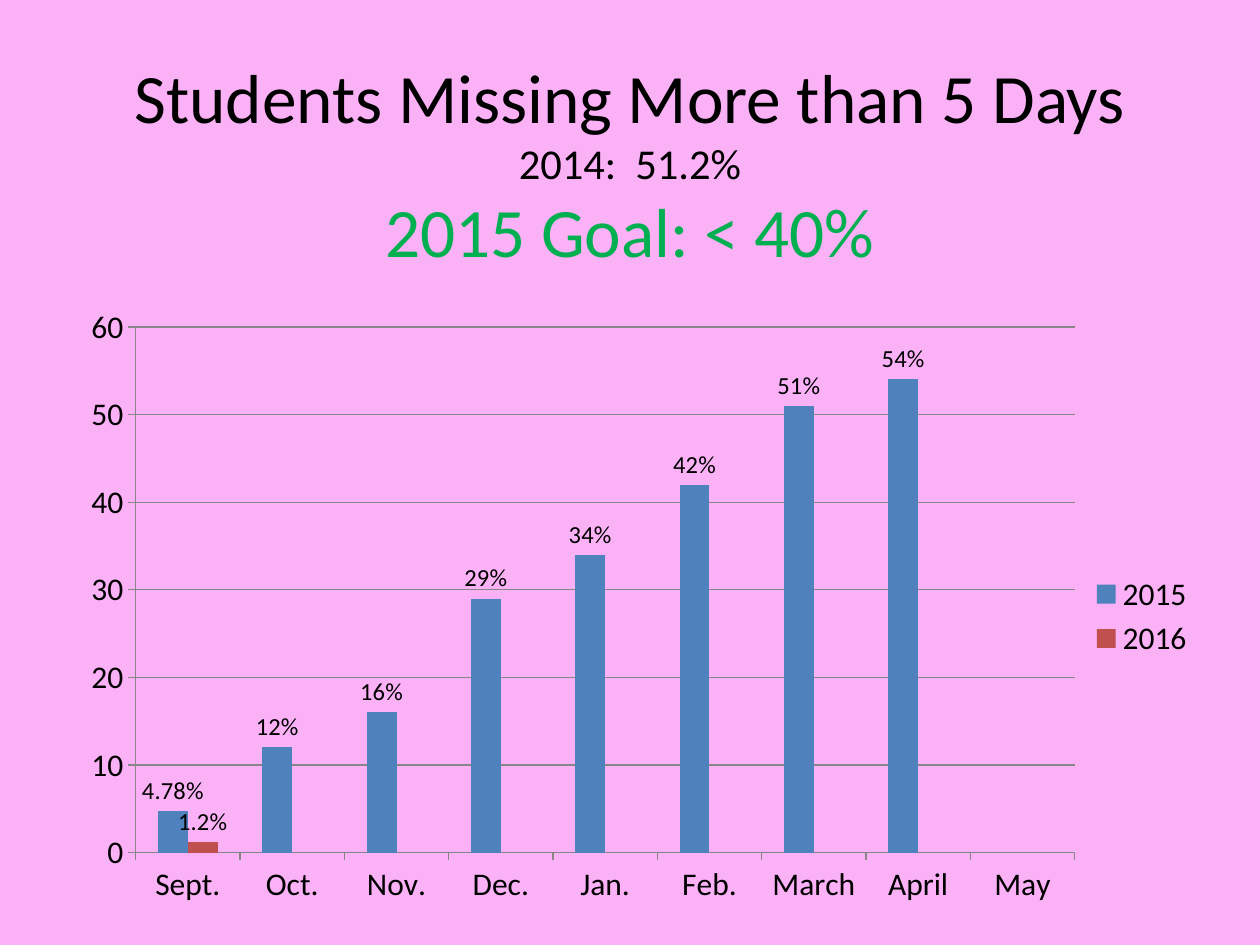
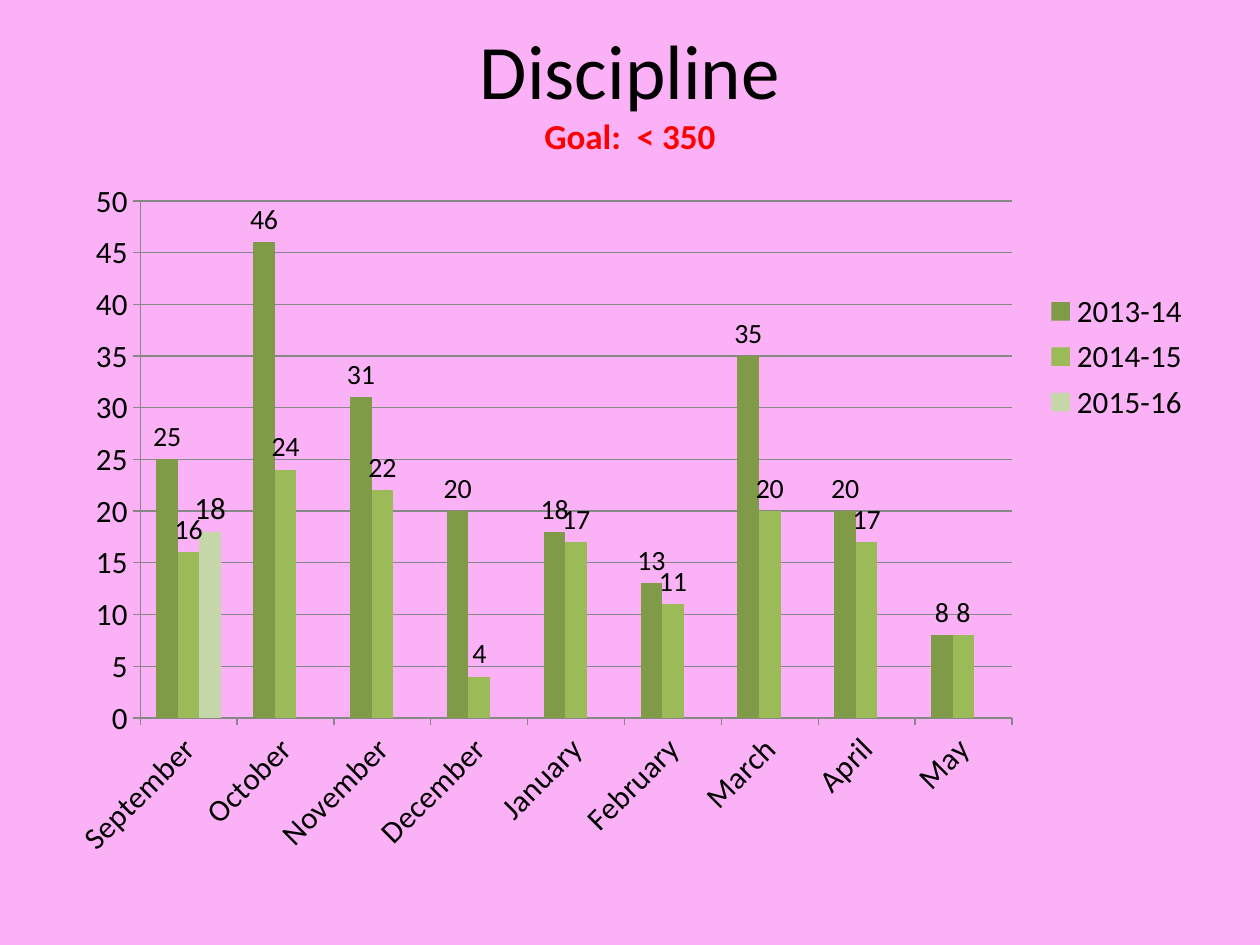
from dataclasses import dataclass

from pptx import Presentation
from pptx.chart.data import CategoryChartData
from pptx.dml.color import RGBColor as RGB
from pptx.enum.chart import XL_CHART_TYPE as ChartType
from pptx.enum.chart import XL_LABEL_POSITION as LabelPos
from pptx.enum.chart import XL_LEGEND_POSITION as LegendPos
from pptx.enum.chart import XL_TICK_MARK as TickMark
from pptx.enum.text import MSO_ANCHOR, PP_ALIGN
from pptx.oxml import parse_xml
from pptx.oxml.ns import nsdecls, qn
from pptx.util import Cm, Pt


@dataclass(frozen=True)
class Theme:
    font: str = "Calibri"
    background: str = "FBB1F6"
    text: str = "000000"
    goal_green: str = "00B050"
    goal_red: str = "FF0000"
    grid: str = "878787"
    years: tuple = ("4F81BD", "C0504D")
    school_years: tuple = ("7F9B48", "9BBB59", "C5D6A8")
    title: float = 44
    long_title: float = 39.6
    subtitle: float = 24.3
    goal: float = 20
    absence_axis: float = 18
    absence_label: float = 14
    discipline_axis: float = 17.7
    discipline_label: float = 15.9


THEME = Theme()


def style_font(font, size, color=THEME.text, bold=False):
    font.name = THEME.font
    font.size = Pt(size)
    font.bold = bold
    font.color.rgb = RGB.from_string(color)


def style_line(line):
    line.color.rgb = RGB.from_string(THEME.grid)
    line.width = Pt(0.75)


def add_slide(prs):
    s = prs.slides.add_slide(prs.slide_layouts[6])
    s.background.fill.solid()
    s.background.fill.fore_color.rgb = RGB.from_string(THEME.background)
    return s


def add_title(s, top, lines):
    """Centre the lines, each (text, size, color, bold), in one paragraph."""
    tf = s.shapes.add_textbox(Cm(1.27), Cm(top), Cm(22.86), Cm(3.18)).text_frame
    tf.word_wrap = True
    tf.vertical_anchor = MSO_ANCHOR.MIDDLE
    p = tf.paragraphs[0]
    p.alignment = PP_ALIGN.CENTER
    p.text = "\v".join(text for text, *_ in lines)
    for r, (_, size, color, bold) in zip(p.runs, lines):
        style_font(r.font, size, color, bold)
    # A line break carries its own size, which sets the height of its line
    for br, (_, size, *_) in zip(p._p.findall(qn("a:br")), lines):
        br.append(parse_xml(f'<a:rPr {nsdecls("a")} sz="{round(size * 100)}"/>'))


def set_layout(parent, index, box, inner=False):
    """Place a chart part at box: left, top, width, height in % of the chart."""
    for old in parent.findall(qn("c:layout")):
        parent.remove(old)
    target = '<c:layoutTarget val="inner"/>' if inner else ""
    modes = "".join(f'<c:{k}Mode val="edge"/>' for k in "xy")
    values = "".join(f'<c:{k} val="{v / 100:.4f}"/>' for k, v in zip("xywh", box))
    parent.insert(index, parse_xml(
        f'<c:layout {nsdecls("c")}><c:manualLayout>{target}{modes}{values}'
        "</c:manualLayout></c:layout>"))


def style_axis(axis, size):
    axis.major_tick_mark = TickMark.OUTSIDE
    axis.minor_tick_mark = TickMark.NONE
    style_line(axis.format.line)
    style_font(axis.tick_labels.font, size)


def label_series(series, color, size, number_format):
    series.format.fill.solid()
    series.format.fill.fore_color.rgb = RGB.from_string(color)
    labels = series.data_labels
    labels.show_value = True
    labels.position = LabelPos.OUTSIDE_END
    labels.number_format = number_format
    labels.number_format_is_linked = False
    style_font(labels.font, size)


def add_column_chart(s, box, months, series, colors, size, label_sizes, top_value,
                     step, plot_box, number_format="General"):
    data = CategoryChartData()
    data.categories = months
    for name, values in series.items():
        data.add_series(name, values + [None] * (len(months) - len(values)))
    chart = s.shapes.add_chart(
        ChartType.COLUMN_CLUSTERED, *map(Cm, box), data).chart
    style_font(chart.font, size)
    chart.has_title = False

    for axis in (chart.category_axis, chart.value_axis):
        style_axis(axis, size)
    values_axis = chart.value_axis
    values_axis.minimum_scale, values_axis.maximum_scale = 0, top_value
    values_axis.major_unit = step
    values_axis.has_major_gridlines = True
    style_line(values_axis.major_gridlines.format.line)

    plot = chart.plots[0]
    plot.gap_width = 150
    plot.overlap = 0
    plot.vary_by_categories = False
    for one, color, label_size in zip(plot.series, colors, label_sizes):
        label_series(one, color, label_size, number_format)

    chart.has_legend = True
    chart.legend.position = LegendPos.RIGHT
    chart.legend.include_in_layout = False
    style_font(chart.legend.font, size)
    set_layout(chart._chartSpace.chart.plotArea, 0, plot_box, inner=True)
    return chart


def build_absence_slide(prs):
    s = add_slide(prs)
    add_title(s, 1.69, [
        ("Students Missing More than 5 Days", THEME.long_title, THEME.text, False),
        ("2014:  51.2%", THEME.subtitle, THEME.text, False),
        ("2015 Goal: < 40%", THEME.long_title, THEME.goal_green, False),
    ])
    add_column_chart(
        s, (1.48, 6.14, 22.86, 12.57),
        ["Sept.", "Oct.", "Nov.", "Dec.", "Jan.", "Feb.", "March", "April", "May"],
        {"2015": [4.78, 12, 16, 29, 34, 42, 51, 54], "2016": [1.2]},
        THEME.years, THEME.absence_axis, [THEME.absence_label] * 2, 60, 10,
        (5.5, 3.6, 82.8, 84.3), 'General"%"')


def build_discipline_slide(prs):
    s = add_slide(prs)
    add_title(s, 0.22, [
        ("Discipline", THEME.title, THEME.text, False),
        ("Goal:  < 350", THEME.goal, THEME.goal_red, True),
    ])
    axis, label = THEME.discipline_axis, THEME.discipline_label
    chart = add_column_chart(
        s, (1.07, 3.38, 23.06, 14.17),
        ["September", "October", "November", "December", "January",
         "February", "March", "April", "May"],
        {"2013-14": [25, 46, 31, 20, 18, 13, 35, 20, 8],
         "2014-15": [16, 24, 22, 4, 17, 11, 20, 17, 8],
         "2015-16": [18]},
        THEME.school_years, axis, [label, label, axis], 50, 5,
        (7.63, 4.75, 76.2, 73.55))
    chart.category_axis._element.txPr.bodyPr.set("rot", str(-45 * 60000))
    set_layout(chart.legend._element, 1, (86.5, 16.7, 13, 20.4))


def main():
    prs = Presentation()
    prs.slide_width, prs.slide_height = Cm(25.4), Cm(19.05)
    build_absence_slide(prs)
    build_discipline_slide(prs)
    prs.save("out.pptx")


if __name__ == "__main__":
    main()
